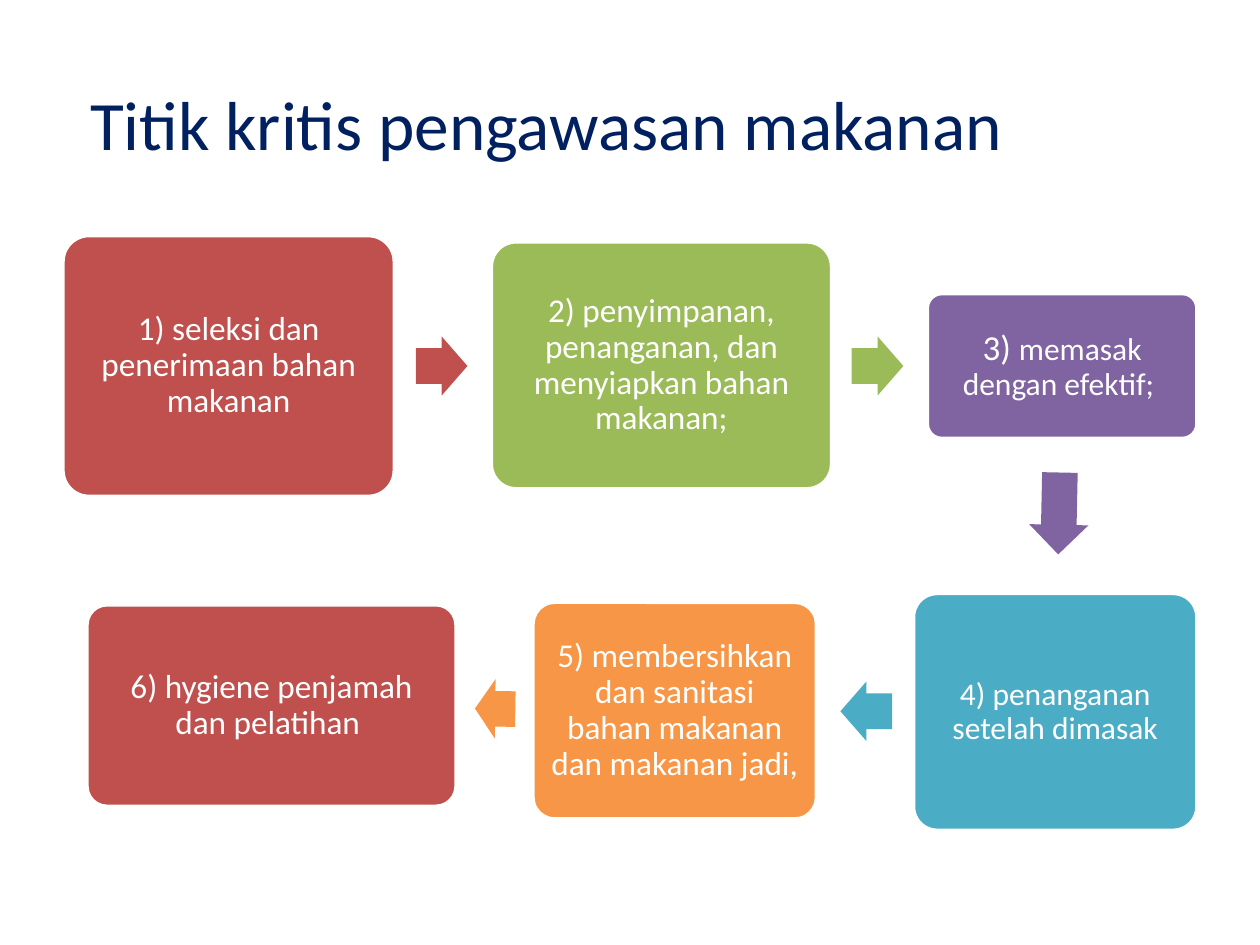
from dataclasses import dataclass
from typing import Any

from pptx import Presentation
from pptx.dml.color import RGBColor
from pptx.enum.shapes import MSO_SHAPE as Preset
from pptx.enum.text import MSO_ANCHOR as Anchor, PP_ALIGN as Align
from pptx.util import Inches, Pt

COLORS = {
    "navy": "002060", "white": "FFFFFF", "red": "C0504D", "green": "9BBB59",
    "purple": "8064A2", "teal": "4BACC6", "orange": "F79646",
}
STEPS = [
    ((0.5, 1.87, 2.63, 2.07), "red", [("1) seleksi dan penerimaan bahan makanan", 19)]),
    ((3.9, 1.92, 2.7, 1.96), "green",
     [("2) penyimpanan, penanganan, dan menyiapkan bahan makanan;", 19)]),
    ((7.36, 2.33, 2.14, 1.15), "purple", [("3) ", 20), ("memasak dengan efektif; ", 18)]),
    ((7.25, 4.71, 2.25, 1.88), "teal", [("4) penanganan setelah dimasak", 18)]),
    ((4.23, 4.78, 2.25, 1.72), "orange",
     [("5) membersihkan dan sanitasi bahan makanan dan makanan jadi,", 19)]),
    ((0.69, 4.8, 2.93, 1.6), "red", [("6) hygiene penjamah dan pelatihan ", 19)]),
]
ARROWS = [
    ((3.3, 2.67, 0.41, 0.47), "red", 0),
    ((6.76, 2.67, 0.41, 0.47), "green", 0),
    ((8.08, 3.84, 0.65, 0.47), "purple", 91.2),
    ((6.67, 5.41, 0.41, 0.47), "teal", 180),
    ((3.77, 5.39, 0.32, 0.47), "orange", 180.8),
]


@dataclass
class SlideBuilder:
    """Hold the slide and its style, and draw each kind of element."""

    slide: Any
    font: str = "Calibri"

    def color(self, name):
        return RGBColor.from_string(COLORS[name])

    def fill_text(self, shape, runs, color, inset, spacing=1.0):
        frame = shape.text_frame
        margins = dict.fromkeys(
            ("margin_left", "margin_top", "margin_right", "margin_bottom"), Inches(inset))
        for name, value in {"word_wrap": True, "vertical_anchor": Anchor.MIDDLE, **margins}.items():
            setattr(frame, name, value)
        paragraph = frame.paragraphs[0]
        paragraph.alignment = Align.CENTER
        paragraph.line_spacing = spacing
        for text, size in runs:
            run = paragraph.add_run()
            run.text = text
            for name, value in {"name": self.font, "size": Pt(size)}.items():
                setattr(run.font, name, value)
            run.font.color.rgb = self.color(color)

    def title(self, box, text, size):
        shape = self.slide.shapes.add_textbox(*map(Inches, box))
        self.fill_text(shape, [(text, size)], "navy", 0.1)

    def block(self, preset, box, color, adjustments):
        shape = self.slide.shapes.add_shape(preset, *map(Inches, box))
        shape.shadow.inherit = False
        shape.fill.solid()
        shape.fill.fore_color.rgb = self.color(color)
        for index, value in enumerate(adjustments):
            shape.adjustments[index] = value
        return shape

    def step(self, box, color, runs):
        shape = self.block(Preset.ROUNDED_RECTANGLE, box, color, [0.1])
        shape.line.color.rgb = self.color("white")
        shape.line.width = Pt(2)
        self.fill_text(shape, runs, "white", 0.08, 0.9)

    def arrow(self, box, color, rotation):
        shape = self.block(Preset.RIGHT_ARROW, box, color, [0.6, 0.5])
        shape.line.fill.background()
        shape.rotation = rotation


def main():
    presentation = Presentation()
    presentation.slide_width = Inches(10)
    presentation.slide_height = Inches(7.5)
    builder = SlideBuilder(presentation.slides.add_slide(presentation.slide_layouts[6]))
    builder.title((0.25, 0.35, 8.17, 1.25), "Titik kritis pengawasan makanan", 39.6)
    for step in STEPS:
        builder.step(*step)
    for arrow in ARROWS:
        builder.arrow(*arrow)
    presentation.save("out.pptx")


if __name__ == "__main__":
    main()
